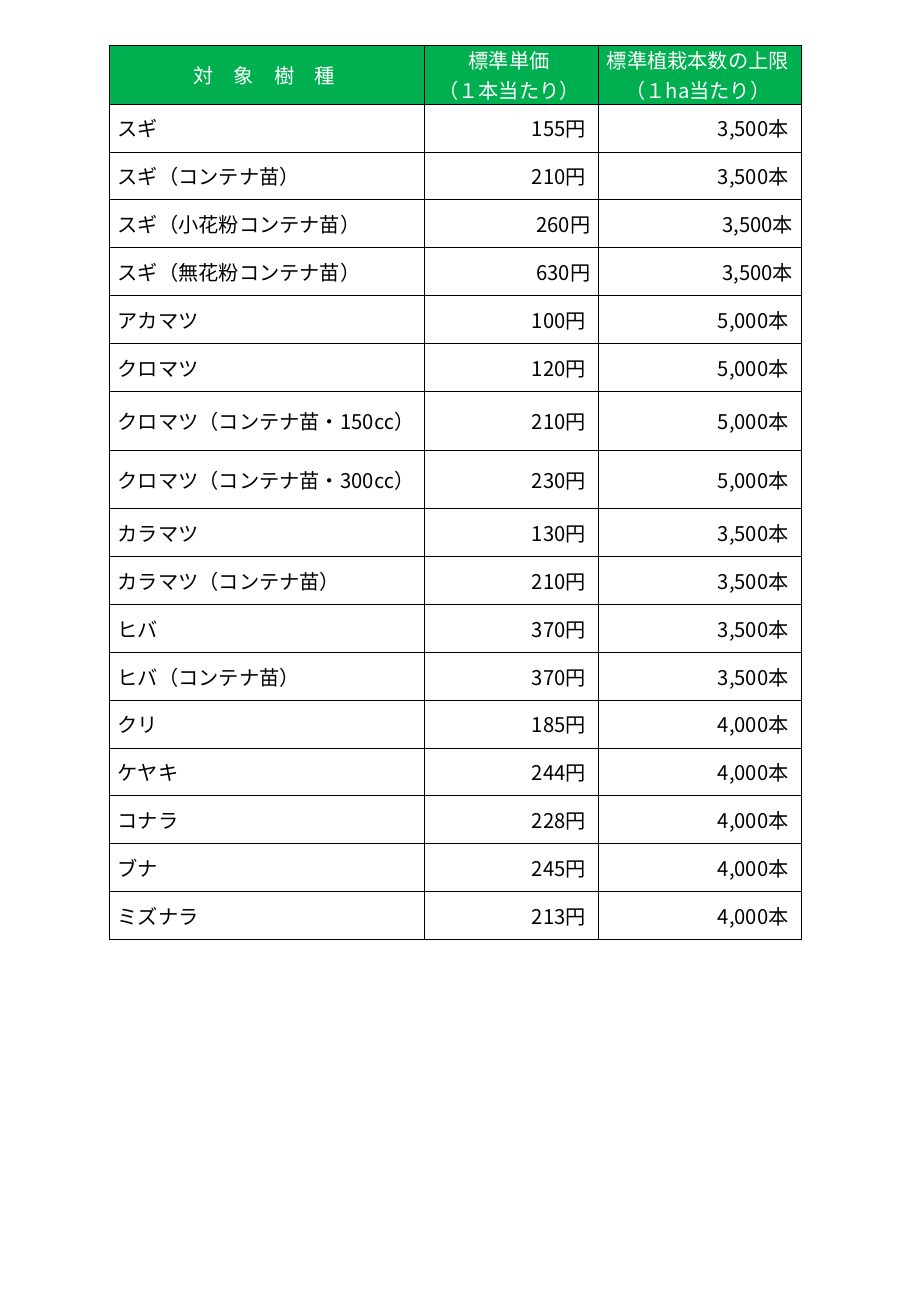
"""Build a slide with the price and planting limit of each tree species."""
import pptx
import pptx.dml.color
import pptx.enum.text
import pptx.oxml
import pptx.oxml.ns
import pptx.util

BLACK = pptx.dml.color.RGBColor(0, 0, 0)
WHITE = pptx.dml.color.RGBColor(255, 255, 255)
GREEN = pptx.dml.color.RGBColor(0, 176, 80)
FONT = "Noto Sans CJK JP"
PAD = pptx.util.Inches(0.07)
WIDTHS = [pptx.util.Inches(w) for w in (2.59, 1.44, 1.67)]
HEAD_ROW = pptx.util.Inches(0.18)
TREE_ROW = pptx.util.Cm(1)
LEFT, CENTER, RIGHT = (
    pptx.enum.text.PP_ALIGN.LEFT,
    pptx.enum.text.PP_ALIGN.CENTER,
    pptx.enum.text.PP_ALIGN.RIGHT,
)
HEADS = [
    "対　象　樹　種 ",
    "標準単価 \n（１本当たり） ",
    "標準植栽本数の上限 \n（１ha当たり） ",
]
TREES = [
    ("スギ", 155, 3500),
    ("スギ（コンテナ苗）", 210, 3500),
    ("スギ（小花粉コンテナ苗）", 260, 3500),
    ("スギ（無花粉コンテナ苗）", 630, 3500),
    ("アカマツ", 100, 5000),
    ("クロマツ", 120, 5000),
    ("クロマツ（コンテナ苗・150㏄）", 210, 5000),
    ("クロマツ（コンテナ苗・300㏄）", 230, 5000),
    ("カラマツ", 130, 3500),
    ("カラマツ（コンテナ苗）", 210, 3500),
    ("ヒバ", 370, 3500),
    ("ヒバ（コンテナ苗）", 370, 3500),
    ("クリ", 185, 4000),
    ("ケヤキ", 244, 4000),
    ("コナラ", 228, 4000),
    ("ブナ", 245, 4000),
    ("ミズナラ", 213, 4000),
]


def add_rules(cell):
    """Draw a thin black line on each side of a cell."""
    props = cell._tc.get_or_add_tcPr()
    for side in "LRTB":
        props.append(pptx.oxml.parse_xml(
            f'<a:ln{side} {pptx.oxml.ns.nsdecls("a")} w="{pptx.util.Pt(0.5)}">'
            f'<a:solidFill><a:srgbClr val="{BLACK}"/></a:solidFill></a:ln{side}>'
        ))


def set_font(para, color):
    """Set the Latin and East Asian font of a paragraph."""
    font = para.font
    font.size = pptx.util.Pt(12)
    font.color.rgb = color
    font.name = FONT
    font._element.find(pptx.oxml.ns.qn("a:latin")).addnext(
        pptx.oxml.parse_xml(
            f'<a:ea {pptx.oxml.ns.nsdecls("a")} typeface="{FONT}"/>'
        )
    )


def fill_cell(cell, text, align, color, pad=PAD, back=None):
    """Write and style one cell."""
    cell.text = text
    cell.vertical_anchor = pptx.enum.text.MSO_ANCHOR.MIDDLE
    cell.margin_left = cell.margin_right = pad
    cell.margin_top = cell.margin_bottom = 0
    for para in cell.text_frame.paragraphs:
        para.alignment = align
        set_font(para, color)
    add_rules(cell)
    if back is None:
        cell.fill.background()
    else:
        cell.fill.solid()
        cell.fill.fore_color.rgb = back


def add_grid(slide, left, top):
    """Add the empty table with its column widths and row heights."""
    count = len(TREES)
    table = slide.shapes.add_table(
        count + 1, len(WIDTHS), left, top,
        sum(WIDTHS), HEAD_ROW + count * TREE_ROW,
    ).table
    table.horz_banding = False
    for col, width in zip(table.columns, WIDTHS):
        col.width = width
    for row in table.rows:
        row.height = TREE_ROW
    table.rows[0].height = HEAD_ROW
    return table


def fill_heads(table):
    """Write the green header row."""
    for col, text in enumerate(HEADS):
        pad = 0 if col else PAD
        fill_cell(table.cell(0, col), text, CENTER, WHITE, pad, GREEN)


def fill_trees(table):
    """Write one row for each species."""
    for row, (name, price, limit) in enumerate(TREES, 1):
        tail = "" if "花粉" in name else " "
        texts = (name, f"{price}円{tail}", f"{limit:,}本{tail}")
        for col, text in enumerate(texts):
            align = RIGHT if col else LEFT
            fill_cell(table.cell(row, col), text, align, BLACK)


def main():
    """Build and save the slide."""
    deck = pptx.Presentation()
    deck.slide_width = pptx.util.Inches(7.5)
    deck.slide_height = pptx.util.Inches(10.83)
    slide = deck.slides.add_slide(deck.slide_layouts[6])
    left = round(deck.slide_width * 0.12)
    top = round(deck.slide_height / 29)
    table = add_grid(slide, left, top)
    fill_heads(table)
    fill_trees(table)
    deck.save("out.pptx")


if __name__ == "__main__":
    main()
